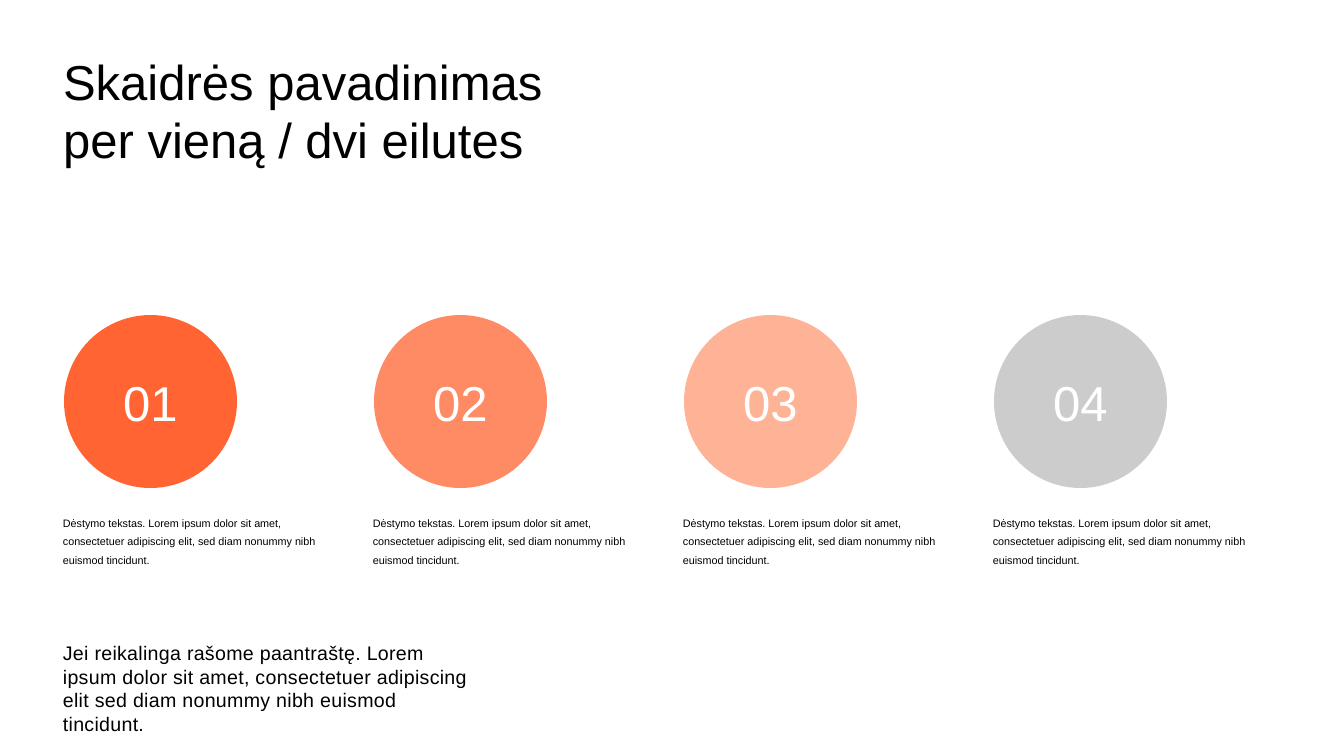
from pptx import Presentation
from pptx.dml.color import RGBColor
from pptx.enum.shapes import MSO_SHAPE
from pptx.enum.text import MSO_ANCHOR, MSO_AUTO_SIZE, PP_ALIGN
from pptx.util import Pt

EMU_PER_PX = 914400 / 100.8
FONT = "Arial"
BLACK = RGBColor(0x00, 0x00, 0x00)
WHITE = RGBColor(0xFF, 0xFF, 0xFF)
CIRCLE_COLORS = (
    RGBColor(0xFF, 0x64, 0x32),
    RGBColor(0xFF, 0x8B, 0x65),
    RGBColor(0xFF, 0xB3, 0x96),
    RGBColor(0xCC, 0xCC, 0xCC),
)
COLUMN_STEP = 310
TITLE = "Skaidrės pavadinimas per vieną / dvi eilutes"
SUBTITLE = (
    "Jei reikalinga rašome paantraštę. Lorem ipsum dolor sit amet, "
    "consectetuer adipiscing elit sed diam nonummy nibh euismod tincidunt."
)
CAPTION = (
    "Dėstymo tekstas. Lorem ipsum dolor sit amet, consectetuer adipiscing elit, "
    "sed diam nonummy nibh euismod tincidunt."
)


def px(length):
    """Convert pixels to EMU."""
    return round(length * EMU_PER_PX)


def write_text(shape, text, size, line_height, color=BLACK,
               align=PP_ALIGN.LEFT, anchor=MSO_ANCHOR.TOP):
    """Fill a shape with one formatted paragraph and return its run."""
    frame = shape.text_frame
    frame.text = text
    frame.word_wrap = True
    frame.auto_size = MSO_AUTO_SIZE.NONE
    frame.vertical_anchor = anchor
    paragraph = frame.paragraphs[0]
    paragraph.alignment = align
    paragraph.line_spacing = Pt(line_height)
    run = paragraph.runs[0]
    run.font.name = FONT
    run.font.size = Pt(size)
    run.font.color.rgb = color
    return run


def place_title(slide):
    """Move and format the title placeholder."""
    title = slide.shapes.title
    title.left, title.top, title.width, title.height = map(px, (53, 46, 539, 139))
    write_text(title, TITLE, 35, 42)


def add_text(slide, left, top, width, height, text, size, line_height):
    """Add a wrapped text box and return its run."""
    box = slide.shapes.add_textbox(px(left), px(top), px(width), px(height))
    return write_text(box, text, size, line_height)


def add_circle(slide, left, number, color):
    """Add a filled circle with a two-digit number."""
    circle = slide.shapes.add_shape(
        MSO_SHAPE.OVAL, px(left), px(315), px(173), px(173))
    circle.shadow.inherit = False
    circle.fill.solid()
    circle.fill.fore_color.rgb = color
    circle.line.fill.background()
    write_text(circle, f"{number:02d}", 35, 42, WHITE,
               PP_ALIGN.CENTER, MSO_ANCHOR.MIDDLE)


def main():
    """Build the slide and save it."""
    presentation = Presentation()
    presentation.slide_width = px(1344)
    presentation.slide_height = px(756)
    slide = presentation.slides.add_slide(presentation.slide_layouts[5])
    place_title(slide)
    subtitle = add_text(slide, 53, 636, 440, 95, SUBTITLE, 14, 16.8)
    subtitle.font._element.set("spc", "20")
    for index, color in enumerate(CIRCLE_COLORS):
        offset = index * COLUMN_STEP
        add_circle(slide, 64 + offset, index + 1, color)
        add_text(slide, 53 + offset, 506, 294, 62, CAPTION, 7.7, 13.2)
    presentation.save("out.pptx")


if __name__ == "__main__":
    main()
